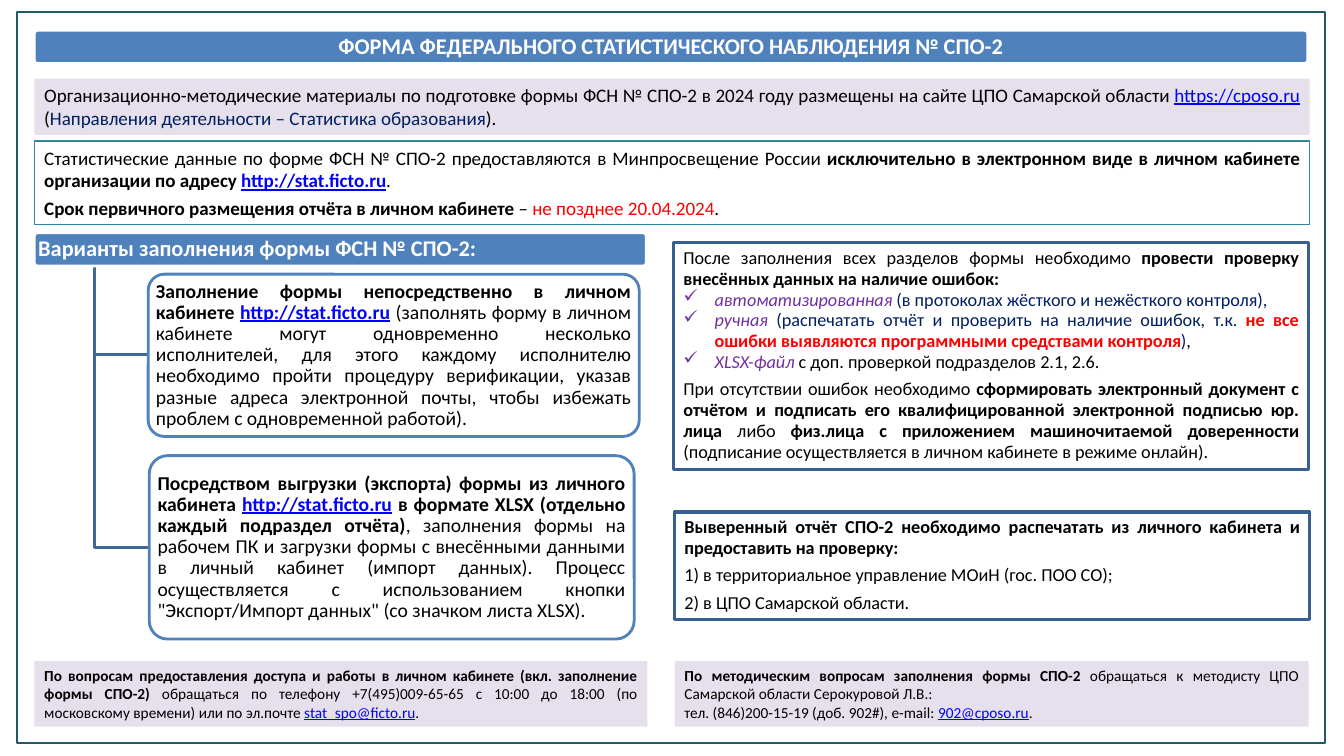
"""Builds the slide on filling in and submitting the federal statistics form СПО-2."""
from lxml import etree
from pptx import Presentation, util as u
from pptx.dml.color import RGBColor
from pptx.enum import shapes, text
from pptx.oxml import ns

PX = 9144
FONT = "Calibri"
WHITE = RGBColor(0xFF, 0xFF, 0xFF)
BLACK = RGBColor(0, 0, 0)
LINK = RGBColor(0, 0, 0xFF)
RED = RGBColor(0xFF, 0, 0)
NAVY = RGBColor(0, 0x20, 0x60)
PURPLE = RGBColor(0x70, 0x30, 0xA0)
BLUE = RGBColor(0x4F, 0x81, 0xBD)
ELBOW = RGBColor(0x3F, 0x67, 0x97)
STEEL = RGBColor(0x37, 0x60, 0x92)
TEAL = RGBColor(0x31, 0x85, 0x9C)
DARK_TEAL = RGBColor(0x21, 0x59, 0x68)
LILAC = RGBColor(0xE6, 0xE0, 0xEC)

# run style: colour, bold, italic, underline
STYLES = {
    "plain": (BLACK, False, False, False),
    "bold": (BLACK, True, False, False),
    "link": (LINK, False, False, True),
    "boldlink": (LINK, True, False, True),
    "head": (WHITE, True, False, False),
    "red": (RED, False, False, False),
    "boldred": (RED, True, False, False),
    "navy": (NAVY, False, False, False),
    "term": (PURPLE, False, True, False),
}

LEFT, CENTER, JUSTIFY = text.PP_ALIGN.LEFT, text.PP_ALIGN.CENTER, text.PP_ALIGN.JUSTIFY
# paragraph kind: alignment, line spacing, points before, points after, bullet
KINDS = {
    "title": (CENTER, 0.9, 0, 0, None),
    "heading": (LEFT, 0.9, 0, 0, None),
    "variant": (JUSTIFY, 0.9, 0, 0, None),
    "body": (JUSTIFY, 1.0, 0, 0, None),
    "lead": (JUSTIFY, 1.0, 0, 3.2, None),
    "tight": (JUSTIFY, 0.95, 0, 0, None),
    "spaced": (JUSTIFY, 0.95, 4.8, 0, None),
    "check": (JUSTIFY, 0.95, 0, 0, "✓"),
}

# panel look: rounded, fill, line colour, line points, side inset, top inset, text size
LOOKS = {
    "frame": (False, None, DARK_TEAL, 1.5, 10, 5, 12),
    "title": (True, BLUE, WHITE, 2, 7, 7, 16),
    "heading": (True, BLUE, WHITE, 2, 3, 2, 16),
    "variant": (True, WHITE, BLUE, 2, 3, 2, 14),
    "notice": (False, LILAC, None, 0, 10, 5, 13.6),
    "deadline": (False, None, TEAL, 1, 10, 5, 13.6),
    "step": (False, None, STEEL, 2.25, 10, 5, 13),
    "contact": (False, LILAC, None, 0, 10, 5, 10.9),
}

HEADING_BOX = (34, 231, 607, 33)
VARIANT_BOXES = [(147, 272, 487, 161), (148, 452, 481, 182)]
TRUNK_X = 94

PANELS = [
    ("frame", (17, 12, 1297, 725), []),
    ("title", (34, 30, 1263, 33), [
        ("title", [("head", "ФОРМА ФЕДЕРАЛЬНОГО СТАТИСТИЧЕСКОГО НАБЛЮДЕНИЯ № СПО-2")]),
    ]),
    ("notice", (34, 78, 1265, 56), [
        ("body", [
            ("plain", "Организационно-методические материалы по подготовке формы ФСН № СПО-2 "
                      "в 2024 году размещены на сайте ЦПО Самарской области "),
            ("link", "https://cposo.ru"), ("plain", " ("),
            ("navy", "Направления деятельности – Статистика образования"), ("plain", ")."),
        ]),
    ]),
    ("deadline", (34, 140, 1265, 83), [
        ("lead", [
            ("plain", "Статистические данные по форме ФСН № СПО-2 предоставляются "
                      "в Минпросвещение России "),
            ("bold", "исключительно в электронном виде в личном кабинете организации по адресу "),
            ("boldlink", "http://stat.ficto.ru"), ("plain", "."),
        ]),
        ("body", [
            ("bold", "Срок первичного размещения отчёта в личном кабинете "),
            ("plain", "– "), ("red", "не позднее 20.04.2024"), ("plain", "."),
        ]),
    ]),
    ("heading", HEADING_BOX, [
        ("heading", [("head", "Варианты заполнения формы ФСН № СПО-2:")]),
    ]),
    ("variant", VARIANT_BOXES[0], [
        ("variant", [
            ("bold", "Заполнение формы непосредственно в личном кабинете "),
            ("boldlink", "http://stat.ficto.ru"),
            ("plain", " (заполнять форму в личном кабинете могут одновременно несколько "
                      "исполнителей, для этого каждому исполнителю необходимо пройти процедуру "
                      "верификации, указав разные адреса электронной почты, чтобы избежать "
                      "проблем с одновременной работой)."),
        ]),
    ]),
    ("variant", VARIANT_BOXES[1], [
        ("variant", [
            ("bold", "Посредством выгрузки (экспорта) формы из личного кабинета "),
            ("boldlink", "http://stat.ficto.ru"),
            ("bold", " в формате XLSX (отдельно каждый подраздел отчёта)"),
            ("plain", ", заполнения формы на рабочем ПК и загрузки формы с внесёнными данными "
                      "в личный кабинет (импорт данных). Процесс осуществляется с использованием "
                      "кнопки \"Экспорт/Импорт данных\" (со значком листа XLSX)."),
        ]),
    ]),
    ("step", (668, 241, 630, 225), [
        ("tight", [
            ("plain", "После заполнения всех разделов формы необходимо "),
            ("bold", "провести проверку внесённых данных на наличие ошибок:"),
        ]),
        ("check", [
            ("term", "автоматизированная "),
            ("navy", "(в протоколах жёсткого и нежёсткого контроля),"),
        ]),
        ("check", [
            ("term", "ручная "),
            ("navy", "(распечатать отчёт и проверить на наличие ошибок, т.к. "),
            ("boldred", "не все ошибки выявляются программными средствами контроля"),
            ("navy", ")"), ("plain", ","),
        ]),
        ("check", [
            ("term", "XLSX-файл "),
            ("plain", "с доп. проверкой подразделов 2.1, 2.6."),
        ]),
        ("spaced", [
            ("plain", "При отсутствии ошибок необходимо "),
            ("bold", "сформировать электронный документ с отчётом и подписать его "
                     "квалифицированной электронной подписью юр. лица"),
            ("plain", " либо "),
            ("bold", "физ.лица с приложением машиночитаемой доверенности "),
            ("plain", "(подписание осуществляется в личном кабинете в режиме онлайн)."),
        ]),
    ]),
    ("step", (669, 508, 630, 107), [
        ("spaced", [("bold", "Выверенный отчёт CПО-2 необходимо распечатать из личного кабинета "
                             "и предоставить на проверку:")]),
        ("spaced", [("plain", "1) в территориальное управление МОиН (гос. ПОО СО);")]),
        ("spaced", [("plain", "2) в ЦПО Самарской области.")]),
    ]),
    ("contact", (34, 656, 608, 65), [
        ("body", [
            ("bold", "По вопросам предоставления доступа и работы в личном кабинете "
                     "(вкл. заполнение формы СПО-2) "),
            ("plain", "обращаться по телефону +7(495)009-65-65 с 10:00 до 18:00 "
                      "(по московскому времени) или по эл.почте "),
            ("link", "stat_spo@ficto.ru"), ("plain", "."),
        ]),
    ]),
    ("contact", (669, 656, 629, 65), [
        ("body", [
            ("bold", "По методическим вопросам заполнения формы СПО-2 "),
            ("plain", "обращаться к методисту ЦПО Самарской области Серокуровой Л.В.:"),
        ]),
        ("body", [
            ("plain", "тел. (846)200-15-19 (доб. 902#), e-mail: "),
            ("link", "902@cposo.ru"), ("plain", "."),
        ]),
    ]),
]


def paint(shape, fill, line, points):
    shape.shadow.inherit = False
    for part, colour in ((shape.fill, fill), (shape.line.fill, line)):
        if colour is None:
            part.background()
        else:
            part.solid()
            part.fore_color.rgb = colour
    if line is not None:
        shape.line.width = u.Pt(points)


def write(paragraph, kind, runs, size):
    align, spacing, before, after, bullet = KINDS[kind]
    paragraph.alignment, paragraph.line_spacing = align, spacing
    paragraph.space_before, paragraph.space_after = u.Pt(before), u.Pt(after)
    if bullet:
        props = paragraph._p.get_or_add_pPr()
        props.set("marL", str(31 * PX))
        props.set("indent", str(-31 * PX))
        etree.SubElement(props, ns.qn("a:buChar"), char=bullet)
    for style, words in runs:
        run = paragraph.add_run()
        run.text = words
        font = run.font
        font.name, font.size = FONT, u.Pt(size)
        font.color.rgb, font.bold, font.italic, font.underline = STYLES[style]


def add_panel(slide, look, box, paragraphs):
    rounded, fill, line, points, side, top, size = LOOKS[look]
    preset = shapes.MSO_SHAPE.ROUNDED_RECTANGLE if rounded else shapes.MSO_SHAPE.RECTANGLE
    panel = slide.shapes.add_shape(preset, *(n * PX for n in box))
    paint(panel, fill, line, points)
    if rounded:
        panel.adjustments[0] = 0.1
    frame = panel.text_frame
    frame.word_wrap = True
    frame.vertical_anchor = text.MSO_ANCHOR.MIDDLE if rounded else text.MSO_ANCHOR.TOP
    frame.margin_left = frame.margin_right = side * PX
    frame.margin_top = frame.margin_bottom = top * PX
    for i, (kind, runs) in enumerate(paragraphs):
        write(frame.add_paragraph() if i else frame.paragraphs[0], kind, runs, size)


def add_elbow(slide, target):
    left, top, _, height = target
    middle = top + height / 2
    pen = slide.shapes.build_freeform(TRUNK_X, HEADING_BOX[1] + HEADING_BOX[3], scale=PX)
    pen.add_line_segments([(TRUNK_X, middle), (left, middle)], close=False)
    paint(pen.convert_to_shape(), None, ELBOW, 2)


def main():
    deck = Presentation()
    deck.slide_width, deck.slide_height = 1333 * PX, 750 * PX
    slide = deck.slides.add_slide(deck.slide_layouts[6])
    for box in VARIANT_BOXES:
        add_elbow(slide, box)
    for panel in PANELS:
        add_panel(slide, *panel)
    deck.save("out.pptx")


if __name__ == "__main__":
    main()
